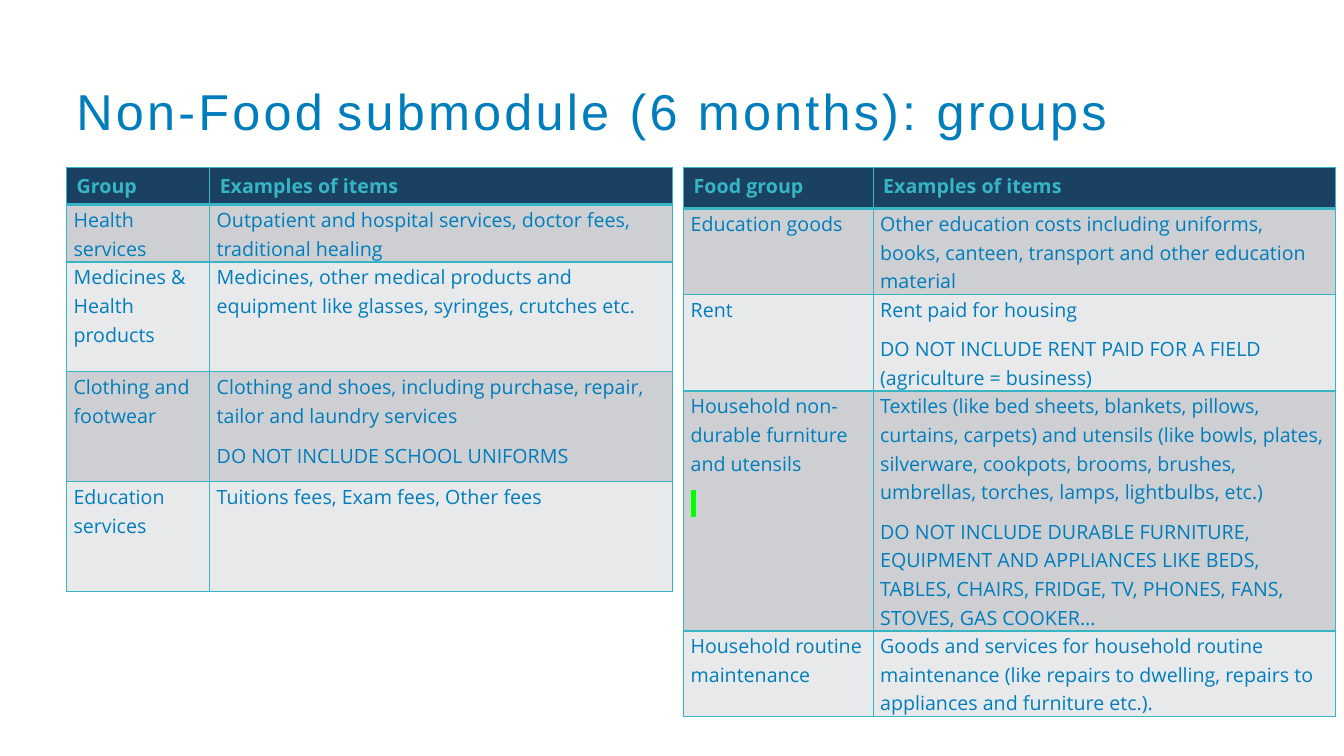
from dataclasses import dataclass

from lxml.etree import SubElement
from pptx import Presentation
from pptx.dml.color import RGBColor
from pptx.enum.text import MSO_ANCHOR
from pptx.oxml.ns import qn
from pptx.slide import Slide
from pptx.table import _Cell
from pptx.text.text import _Paragraph
from pptx.util import Inches, Pt


@dataclass(frozen=True)
class Theme:
    """Colours, fonts and type sizes of the slide."""

    background: str = "FFFFFE"
    title: str = "007DBC"
    title_gap: str = "0070BA"
    body: str = "007DBC"
    accent: str = "36B5C5"
    header_fill: str = "1A4161"
    band_fills: tuple[str, str] = ("CDCFD2", "E8E9EA")
    highlight: str = "00FF00"
    title_font: str = "Arial"
    body_font: str = "Open Sans"
    title_size: float = 36
    gap_size: float = 30
    body_size: float = 14
    title_tracking: int = 230
    thin_border: float = 1
    thick_border: float = 3


@dataclass(frozen=True)
class TitlePart:
    """A stretch of the title with its own type settings."""

    text: str
    font: str
    size: float
    color: str
    tracking: int
    bold: bool


@dataclass(frozen=True)
class GroupTable:
    """A table of expenditure groups; each cell holds a tuple of paragraphs."""

    left: float
    columns: tuple[float, float]
    row_heights: tuple[float, ...]
    header: tuple[str, str]
    rows: tuple[tuple[tuple[str, ...], tuple[str, ...]], ...]


THEME = Theme()
TABLE_TOP = 1.66
HIGHLIGHTED_SPACE = " "

TITLE_PARTS = (
    TitlePart("Non-Food", THEME.title_font, THEME.title_size, THEME.title, THEME.title_tracking, False),
    TitlePart(" ", THEME.body_font, THEME.gap_size, THEME.title_gap, 0, True),
    TitlePart("submodule (6 months): groups", THEME.title_font, THEME.title_size, THEME.title,
              THEME.title_tracking, False),
)

GROUP_TABLES = (
    GroupTable(
        0.66, (1.42, 4.59), (0.37, 0.57, 1.09, 1.09, 1.09),
        ("Group", "Examples of items"),
        (
            (("Health services",),
             ("Outpatient and hospital services, doctor fees, traditional healing",)),
            (("Medicines & Health products",),
             ("Medicines, other medical products and equipment like glasses, syringes, crutches etc.",)),
            (("Clothing and footwear",),
             ("Clothing and shoes, including purchase, repair, tailor and laundry services",
              "DO NOT INCLUDE SCHOOL UNIFORMS")),
            (("Education services",),
             ("Tuitions fees, Exam fees, Other fees",)),
        ),
    ),
    GroupTable(
        6.78, (1.88, 4.59), (0.41, 0.85, 0.96, 2.38, 0.85),
        ("Food group", "Examples of items"),
        (
            (("Education goods",),
             ("Other education costs including uniforms, books, canteen, transport and other "
              "education material",)),
            (("Rent",),
             ("Rent paid for housing",
              "DO NOT INCLUDE RENT PAID FOR A FIELD (agriculture = business)")),
            (("Household non-durable furniture and utensils", HIGHLIGHTED_SPACE),
             ("Textiles (like bed sheets, blankets, pillows, curtains, carpets) and utensils (like "
              "bowls, plates, silverware, cookpots, brooms, brushes, umbrellas, torches, lamps, "
              "lightbulbs, etc.)",
              "DO NOT INCLUDE DURABLE FURNITURE, EQUIPMENT AND APPLIANCES LIKE BEDS, TABLES, "
              "CHAIRS, FRIDGE, TV, PHONES, FANS, STOVES, GAS COOKER…")),
            (("Household routine maintenance",),
             ("Goods and services for household routine maintenance (like repairs to dwelling, "
              "repairs to appliances and furniture etc.).",)),
        ),
    ),
)


def add_title(slide: Slide) -> None:
    """Add the title with its letter-spaced runs."""
    box = slide.shapes.add_textbox(Inches(0.66), Inches(0.5), Inches(11.53), Inches(1.26))
    frame = box.text_frame
    frame.word_wrap = True
    frame.vertical_anchor = MSO_ANCHOR.MIDDLE
    paragraph = frame.paragraphs[0]
    paragraph.line_spacing = 0.9
    for part in TITLE_PARTS:
        run = paragraph.add_run()
        run.text = part.text
        run.font.name = part.font
        run.font.size = Pt(part.size)
        run.font.bold = part.bold
        run.font.color.rgb = RGBColor.from_string(part.color)
        run._r.get_or_add_rPr().set("spc", str(part.tracking))


def style_paragraph(paragraph: _Paragraph, color: str, bold: bool) -> None:
    """Set the table type on a paragraph."""
    paragraph.font.name = THEME.body_font
    paragraph.font.size = Pt(THEME.body_size)
    paragraph.font.bold = bold
    paragraph.font.color.rgb = RGBColor.from_string(color)


def set_borders(cell: _Cell, row: int) -> None:
    """Outline a cell, with a thick rule between header and body."""
    thick_side = {0: "lnB", 1: "lnT"}.get(row)
    properties = cell._tc.get_or_add_tcPr()
    for side in ("lnL", "lnR", "lnT", "lnB"):
        width = THEME.thick_border if side == thick_side else THEME.thin_border
        line = SubElement(properties, qn(f"a:{side}"), w=str(Pt(width)))
        fill = SubElement(line, qn("a:solidFill"))
        SubElement(fill, qn("a:srgbClr"), val=THEME.accent)


def fill_cell(cell: _Cell, row: int, texts: tuple[str, ...]) -> None:
    """Write and format the paragraphs of one cell."""
    is_header = row == 0
    set_borders(cell, row)
    cell.fill.solid()
    color = THEME.header_fill if is_header else THEME.band_fills[(row - 1) % 2]
    cell.fill.fore_color.rgb = RGBColor.from_string(color)
    if not is_header:
        cell.margin_left = cell.margin_right = Inches(0.07)
        cell.margin_top = cell.margin_bottom = Inches(0)
    for index, text in enumerate(texts):
        paragraph = cell.text_frame.add_paragraph() if index else cell.text_frame.paragraphs[0]
        run = paragraph.add_run()
        run.text = text
        if not is_header:
            paragraph.line_spacing = 1.07
            paragraph.space_after = Pt(8)
        style_paragraph(paragraph, THEME.accent if is_header else THEME.body, is_header)
        if text == HIGHLIGHTED_SPACE:
            highlight = SubElement(run._r.get_or_add_rPr(), qn("a:highlight"))
            SubElement(highlight, qn("a:srgbClr"), val=THEME.highlight)


def add_group_table(slide: Slide, group_table: GroupTable) -> None:
    """Add one table of groups."""
    rows = (tuple((text,) for text in group_table.header), *group_table.rows)
    table = slide.shapes.add_table(
        len(rows), len(group_table.columns), Inches(group_table.left), Inches(TABLE_TOP),
        Inches(sum(group_table.columns)), Inches(sum(group_table.row_heights)),
    ).table
    table.first_row = table.horz_banding = False
    for column, width in zip(table.columns, group_table.columns):
        column.width = Inches(width)
    for row, height in zip(table.rows, group_table.row_heights):
        row.height = Inches(height)
    for row_index, row_texts in enumerate(rows):
        for column_index, texts in enumerate(row_texts):
            fill_cell(table.cell(row_index, column_index), row_index, texts)


def main() -> None:
    """Build and save the presentation."""
    presentation = Presentation()
    presentation.slide_width = Inches(13.33)
    presentation.slide_height = Inches(7.5)
    slide = presentation.slides.add_slide(presentation.slide_layouts[6])
    slide.background.fill.solid()
    slide.background.fill.fore_color.rgb = RGBColor.from_string(THEME.background)
    add_title(slide)
    for group_table in GROUP_TABLES:
        add_group_table(slide, group_table)
    presentation.save("out.pptx")


if __name__ == "__main__":
    main()
